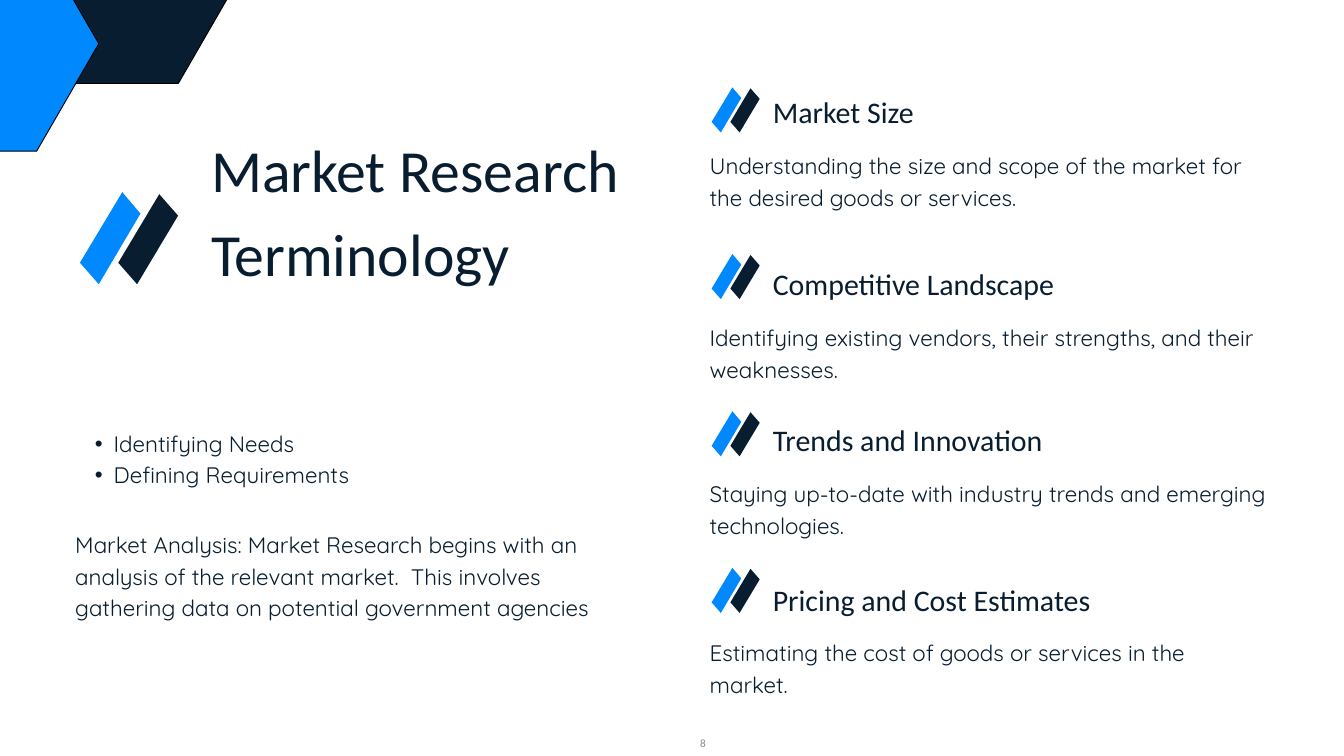
from lxml import etree
from pptx import Presentation
from pptx.dml.color import RGBColor
from pptx.enum import text
from pptx.oxml import ns
from pptx.util import Inches, Pt

NAVY = RGBColor(0x08, 0x1D, 0x2F)
BLUE = RGBColor(0x00, 0x89, 0xFF)
BLACK = RGBColor(0x00, 0x00, 0x00)
GRAY = RGBColor(0x8C, 0x8C, 0x8C)

HEADING_FONT = "Calibri"
BODY_FONT = "Quicksand"
LINE_RATIO = 1.4

BLUE_STRIPE = [(0, 1.05), (0.63, 0), (0.9, 0.32), (0.28, 1.37)]
NAVY_STRIPE = [(0.57, 1.05), (1.18, 0.03), (1.46, 0.35), (0.85, 1.37)]

TERMS = [
    (1.31, 1.3, 4.06, "Market Size",
     "Understanding the size and scope of the market for the desired goods or services."),
    (3.87, 3.78, 5.31, "Competitive Landscape",
     "Identifying existing vendors, their strengths, and their weaknesses."),
    (6.19, 6.12, 5.19, "Trends and Innovation",
     "Staying up-to-date with industry trends and emerging technologies."),
    (8.56, 8.45, 5.75, "Pricing and Cost Estimates",
     "Estimating the cost of goods or services in the market."),
]


def add_bullet(paragraph):
    paragraph.level = 1
    properties = paragraph._p.get_or_add_pPr()
    properties.set("marL", str(Inches(0.57)))
    properties.set("indent", str(Inches(-0.28)))
    etree.SubElement(properties, ns.qn("a:buFont")).set("typeface", "Arial")
    etree.SubElement(properties, ns.qn("a:buChar")).set("char", "•")


def write_lines(shape, lines, size, font_name, bulleted=False):
    frame = shape.text_frame
    frame.word_wrap = True
    frame.auto_size = text.MSO_AUTO_SIZE.NONE
    frame.vertical_anchor = text.MSO_ANCHOR.TOP
    frame.margin_left = frame.margin_top = frame.margin_right = frame.margin_bottom = 0
    for index, line in enumerate(lines):
        paragraph = frame.paragraphs[0] if index == 0 else frame.add_paragraph()
        if bulleted:
            add_bullet(paragraph)
        paragraph.alignment = text.PP_ALIGN.LEFT
        paragraph.line_spacing = Pt(size * LINE_RATIO)
        run = paragraph.add_run()
        run.text = line
        run.font.size = Pt(size)
        run.font.name = font_name
        run.font.color.rgb = NAVY


def add_text(slide, left, top, width, height, lines, size, font_name, bulleted=False):
    shape = slide.shapes.add_textbox(Inches(left), Inches(top), Inches(width), Inches(height))
    write_lines(shape, lines, size, font_name, bulleted)


def set_title(slide, lines):
    title = slide.shapes.title
    title.left, title.top = Inches(3.14), Inches(1.8)
    title.width, title.height = Inches(6.19), Inches(3.68)
    write_lines(title, lines, 64, HEADING_FONT)


def add_polygon(slide, points, color):
    corners = [(Inches(x), Inches(y)) for x, y in points]
    builder = slide.shapes.build_freeform(*corners[0])
    builder.add_line_segments(corners[1:], close=True)
    shape = builder.convert_to_shape()
    shape.shadow.inherit = False
    shape.fill.solid()
    shape.fill.fore_color.rgb = color
    shape.line.fill.background()
    return shape


def add_hexagon(slide, left, top, width, height, color):
    inset = width / 4
    right, middle, bottom = left + width, top + height / 2, top + height
    shape = add_polygon(slide, [
        (right - inset, top), (left + inset, top), (left, middle),
        (left + inset, bottom), (right - inset, bottom), (right, middle),
    ], color)
    shape.line.color.rgb = BLACK
    shape.line.width = Pt(1)


def add_stripes(slide, left, top, scale):
    for stripe, color in ((NAVY_STRIPE, NAVY), (BLUE_STRIPE, BLUE)):
        add_polygon(slide, [(left + x * scale, top + y * scale) for x, y in stripe], color)


def add_term(slide, top, icon_top, width, heading, description):
    add_text(slide, 11.5, top, width, 0.59, [heading], 32, HEADING_FONT)
    add_text(slide, 10.56, top + 0.89, 8.32, 0.91, [description], 24, BODY_FONT)
    add_stripes(slide, 10.59, icon_top, 0.49)


def add_page_number(slide, number):
    shape = slide.shapes.add_textbox(Inches(8.27), Inches(10.85), Inches(2.33), Inches(0.4))
    frame = shape.text_frame
    frame.word_wrap = True
    frame.vertical_anchor = text.MSO_ANCHOR.MIDDLE
    paragraph = frame.paragraphs[0]
    paragraph.alignment = text.PP_ALIGN.RIGHT
    run = paragraph.add_run()
    run.text = number
    run.font.size = Pt(12)
    run.font.name = HEADING_FONT
    run.font.color.rgb = GRAY


def main():
    presentation = Presentation()
    presentation.slide_width = Inches(20)
    presentation.slide_height = Inches(11.25)
    slide = presentation.slides.add_slide(presentation.slide_layouts[5])

    set_title(slide, ["Market Research", "Terminology"])
    add_text(slide, 1.12, 6.33, 7.09, 0.91,
             ["Identifying Needs", "Defining Requirements"], 24, BODY_FONT, bulleted=True)
    add_text(slide, 1.12, 7.84, 7.77, 1.37,
             ["Market Analysis: Market Research begins with an analysis of the relevant "
              "market.  This involves gathering data on potential government agencies"],
             24, BODY_FONT)
    add_hexagon(slide, 0.15, -1.65, 3.34, 2.89, NAVY)
    add_hexagon(slide, -2.23, -0.95, 3.7, 3.2, BLUE)
    add_stripes(slide, 1.19, 2.86, 1)
    for term in TERMS:
        add_term(slide, *term)
    add_page_number(slide, "8")

    presentation.save("out.pptx")


if __name__ == "__main__":
    main()
